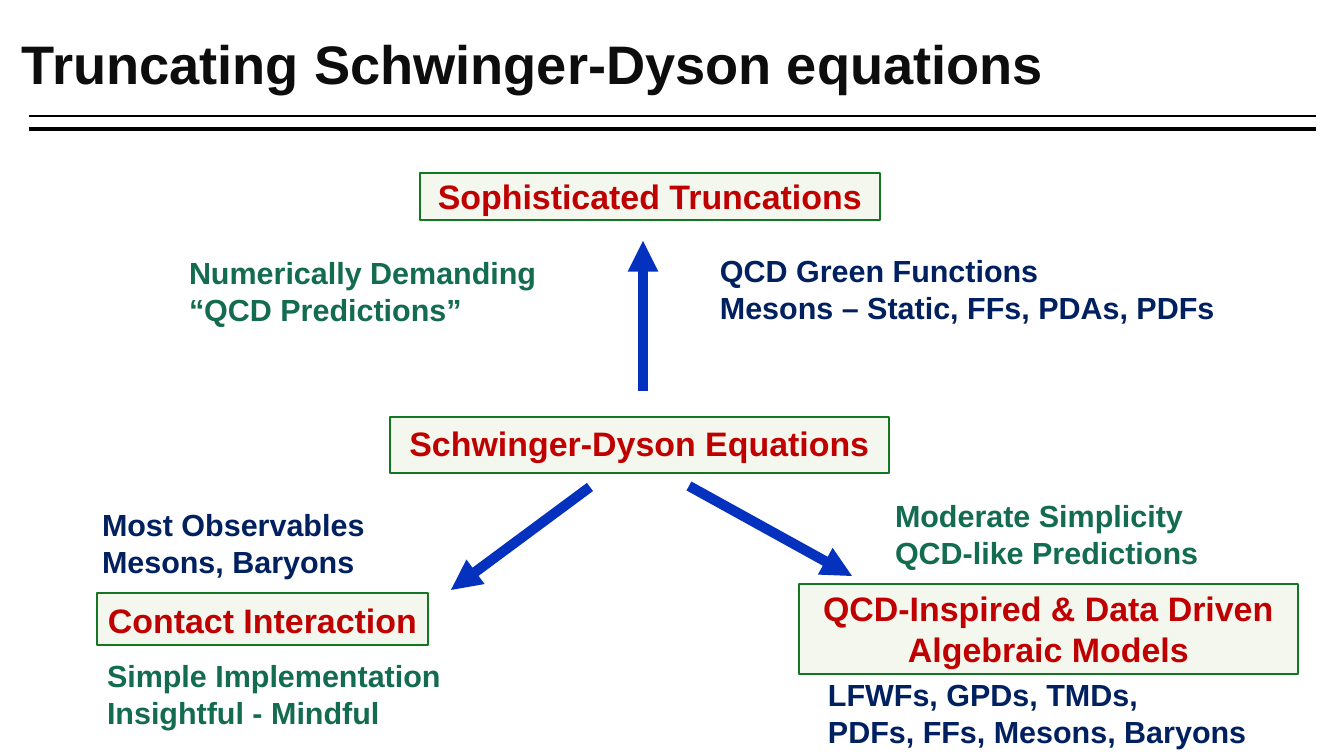
import pptx
import pptx.util
import pptx.dml.color
import pptx.enum.shapes
import pptx.enum.text
import pptx.oxml.ns
import pptx.oxml.xmlchemy
from dataclasses import dataclass


@dataclass(frozen=True)
class Theme:
    font: str = "Arial"
    ink: str = "0D0D0D"
    rule: str = "000000"
    red: str = "C00000"
    green: str = "136B50"
    navy: str = "002060"
    arrow: str = "0432BF"
    fill: str = "DDE8CB"
    edge: str = "127622"
    clear: int = 33
    head: int = 32
    label: int = 20
    note: int = 18


theme = Theme()

# Content: lengths in px
SIZE = (1344, 756)
TITLE = ("Truncating Schwinger-Dyson equations", (22, 0, 1276, 126))
RULES = [(116, 0.75), (129, 2.3)]  # height, weight
SPAN = (29, 1316)
BOXES = [  # lines, place, gap above the text
    (["QCD-Inspired & Data Driven", "Algebraic Models"], (799, 584, 499, 90), 4),
    (["Contact Interaction"], (97, 593, 331, 52), 7),
    (["Schwinger-Dyson Equations"], (390, 417, 499, 56), 6),
    (["Sophisticated Truncations"], (420, 173, 460, 47), 3),
]
ARROWS = [(689, 486, 852, 576), (590, 487, 451, 590), (643, 391, 643, 241)]
NOTES = [  # lines, place, colour
    (["Numerically Demanding", "“QCD Predictions”"], (189, 254, 397, 79), theme.green),
    (["QCD Green Functions", "Mesons – Static, FFs, PDAs, PDFs"],
     (720, 252, 551, 84), theme.navy),
    (["Simple Implementation", "Insightful - Mindful"], (107, 657, 367, 79), theme.green),
    (["Most Observables", "Mesons, Baryons"], (102, 506, 287, 79), theme.navy),
    (["Moderate Simplicity", "QCD-like Predictions"], (895, 497, 367, 79), theme.green),
    (["LFWFs, GPDs, TMDs,", "PDFs, FFs, Mesons, Baryons"],
     (828, 676, 444, 79), theme.navy),
]

SCALE = 914400 / 122
ALIGN = pptx.enum.text.PP_ALIGN
ANCHOR = pptx.enum.text.MSO_ANCHOR


def px(*vals):
    return [pptx.util.Emu(round(v * SCALE)) for v in vals]


def rgb(code):
    return pptx.dml.color.RGBColor.from_string(code)


def add_tag(node, name, **attrs):
    tag = pptx.oxml.xmlchemy.OxmlElement(name)
    for key, val in attrs.items():
        tag.set(key, val)
    node.append(tag)


def write(shape, lines, size, color, align=ALIGN.LEFT, anchor=ANCHOR.TOP, gap=0):
    frame = shape.text_frame
    frame.word_wrap = True
    frame.auto_size = pptx.enum.text.MSO_AUTO_SIZE.NONE
    frame.vertical_anchor = anchor
    frame.margin_left = frame.margin_right = frame.margin_bottom = 0
    frame.margin_top = px(gap)[0]
    for i, line in enumerate(lines):
        para = frame.add_paragraph() if i else frame.paragraphs[0]
        para.alignment = align
        run = para.add_run()
        run.text = line
        run.font.name = theme.font
        run.font.size = pptx.util.Pt(size)
        run.font.bold = True
        run.font.color.rgb = rgb(color)


def draw_line(slide, ends, color, width, head=False):
    line = slide.shapes.add_connector(
        pptx.enum.shapes.MSO_CONNECTOR.STRAIGHT, *px(*ends))
    line.line.color.rgb = rgb(color)
    line.line.width = pptx.util.Pt(width)
    if head:
        add_tag(line.line._get_or_add_ln(), "a:tailEnd", type="triangle")
    add_tag(line._element.spPr, "a:effectLst")


def draw_box(slide, lines, place, gap):
    box = slide.shapes.add_shape(
        pptx.enum.shapes.MSO_SHAPE.RECTANGLE, *px(*place))
    box.shadow.inherit = False
    box.fill.solid()
    box.fill.fore_color.rgb = rgb(theme.fill)
    tint = box._element.spPr.find(".//" + pptx.oxml.ns.qn("a:srgbClr"))
    add_tag(tint, "a:alpha", val=str(theme.clear * 1000))
    box.line.color.rgb = rgb(theme.edge)
    box.line.width = pptx.util.Pt(1.5)
    write(box, lines, theme.label, theme.red, ALIGN.CENTER, gap=gap)


def main():
    deck = pptx.Presentation()
    deck.slide_width, deck.slide_height = px(*SIZE)
    slide = deck.slides.add_slide(deck.slide_layouts[5])

    # Title and the double rule
    text, place = TITLE
    title = slide.shapes.title
    title.left, title.top, title.width, title.height = px(*place)
    write(title, [text], theme.head, theme.ink, anchor=ANCHOR.MIDDLE)
    left, right = SPAN
    for y, width in RULES:
        draw_line(slide, (left, y, right, y), theme.rule, width)

    # Boxes and arrows
    for lines, place, gap in BOXES:
        draw_box(slide, lines, place, gap)
    for ends in ARROWS:
        draw_line(slide, ends, theme.arrow, 6, head=True)

    # Notes
    for lines, place, color in NOTES:
        note = slide.shapes.add_textbox(*px(*place))
        write(note, lines, theme.note, color)

    deck.save("out.pptx")


if __name__ == "__main__":
    main()
